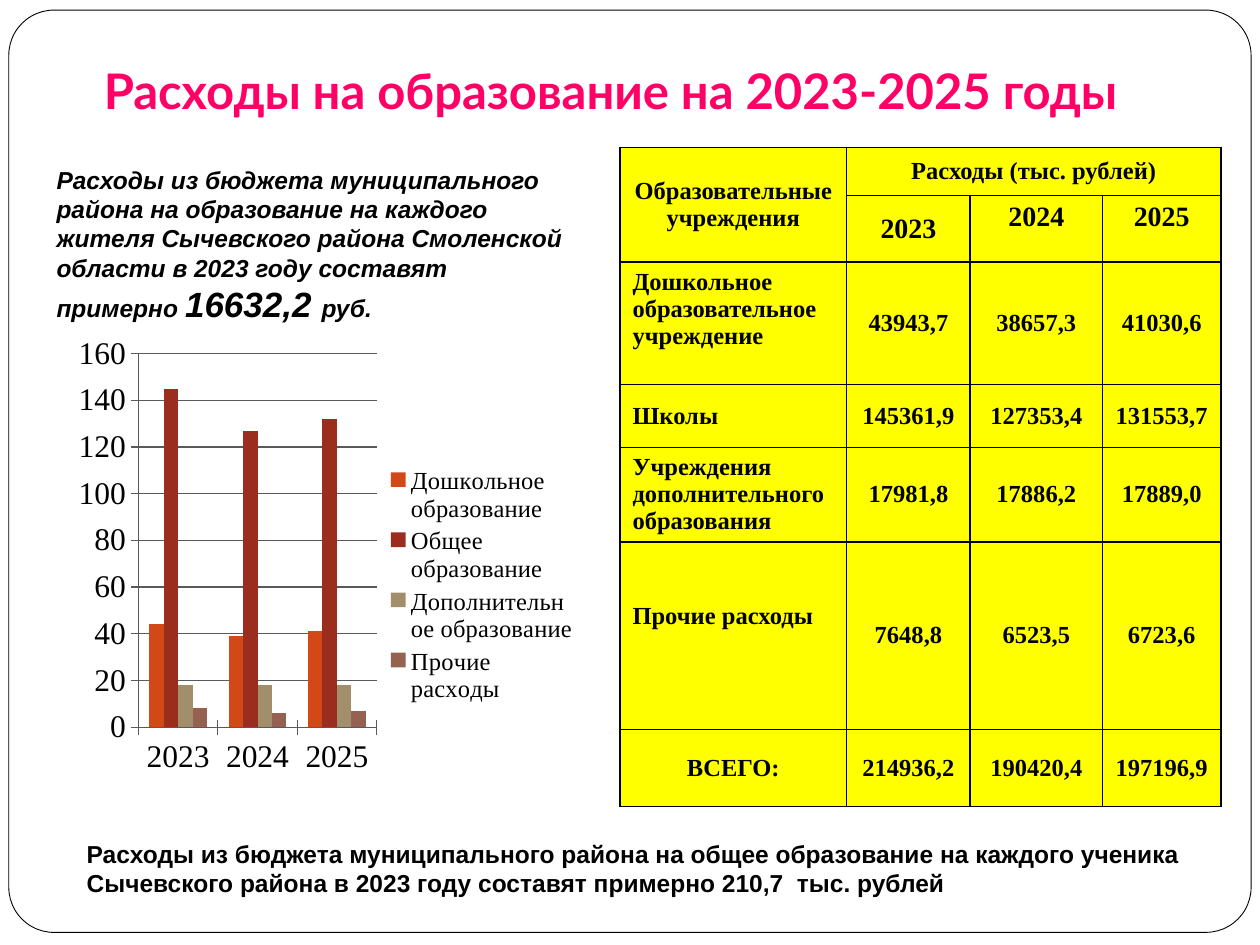
from lxml import etree
from pptx import Presentation
from pptx import util as u
from pptx.chart.data import CategoryChartData
from pptx.dml.color import RGBColor
from pptx.enum import chart as ch, shapes, text
from pptx.oxml import ns

In, Pt = u.Inches, u.Pt
AL, ANC = text.PP_ALIGN, text.MSO_ANCHOR
COLORS = {"title": "FF0066", "ink": "000000", "paper": "FFFFFF", "cell": "FFFF00", "axis": "595959"}
TITLE = "Расходы на образование на 2023-2025 годы"
RESIDENT = [
    ("Расходы из бюджета муниципального района на образование на каждого жителя "
     "Сычевского района Смоленской области в 2023 году составят примерно ", 14),
    ("16632,2 ", 20),
    ("руб.", 14),
]
PUPIL = [
    ("Расходы из бюджета муниципального района на общее образование на каждого ученика "
     "Сычевского района в 2023 году составят примерно 210,7  тыс. рублей", 14),
]
YEARS = ["2023", "2024", "2025"]
SERIES = [
    ("Дошкольное образование", (44, 39, 41), "D34817"),
    ("Общее образование", (145, 127, 132), "9B2D1F"),
    ("Дополнительное образование", (18, 18, 18), "A28E6A"),
    ("Прочие расходы", (8, 6, 7), "956251"),
]
ROWS = [
    ["Образовательные учреждения", "Расходы (тыс. рублей)", "", ""],
    ["", *YEARS],
    ["Дошкольное образовательное учреждение", "43943,7", "38657,3", "41030,6"],
    ["Школы", "145361,9", "127353,4", "131553,7"],
    ["Учреждения\nдополнительного\nобразования", "17981,8", "17886,2", "17889,0"],
    ["Прочие расходы", "7648,8", "6523,5", "6723,6"],
    ["ВСЕГО:", "214936,2", "190420,4", "197196,9"],
]
COL_W = [1.8, 0.98, 1.05, 0.94]
ROW_H = [0.38, 0.53, 0.97, 0.5, 0.75, 1.49, 0.61]
TOP_CELLS = {(1, 2), (1, 3), (2, 0), (5, 0)}


def rgb(name):
    return RGBColor.from_string(COLORS.get(name, name))


def style(font, name, size, color="ink", bold=False):
    font.name, font.size, font.bold = name, Pt(size), bold
    font.color.rgb = rgb(color)


def add_frame(slide):
    sp = slide.shapes.add_shape(shapes.MSO_SHAPE.ROUNDED_RECTANGLE, In(0.07), In(0.08), In(9.86), In(7.32))
    sp.adjustments[0] = 0.049
    sp.shadow.inherit = False
    sp.fill.solid()
    sp.fill.fore_color.rgb = rgb("paper")
    sp.line.color.rgb = rgb("ink")
    sp.line.width = Pt(0.5)
    slide.shapes._spTree.insert(2, sp._element)


def add_title(slide):
    sp = slide.shapes.title
    sp.left, sp.top, sp.width, sp.height = In(0), In(0.28), In(9.69), In(0.77)
    tf = sp.text_frame
    tf.text = TITLE
    tf.vertical_anchor = ANC.BOTTOM
    tf.margin_bottom = In(0.1)
    p = tf.paragraphs[0]
    p.alignment = AL.CENTER
    style(p.font, "Lato", 28, "title", True)


def add_note(slide, box, runs, italic=False):
    tf = slide.shapes.add_textbox(*map(In, box)).text_frame
    tf.word_wrap = True
    tf.vertical_anchor = ANC.MIDDLE
    p = tf.paragraphs[0]
    style(p.font, "Arial", 14, bold=True)
    p.font.italic = italic
    for words, size in runs:
        r = p.add_run()
        r.text = words
        r.font.size = Pt(size)


def add_borders(cell):
    tcPr = cell._tc.get_or_add_tcPr()
    for i, side in enumerate(("lnL", "lnR", "lnT", "lnB")):
        ln = etree.Element(ns.qn(f"a:{side}"), w=str(Pt(1)))
        fill = etree.SubElement(ln, ns.qn("a:solidFill"))
        etree.SubElement(fill, ns.qn("a:srgbClr"), val=COLORS["ink"])
        tcPr.insert(i, ln)


def add_table(slide):
    table = slide.shapes.add_table(len(ROWS), len(COL_W), In(4.92), In(1.17),
                                   In(sum(COL_W)), In(sum(ROW_H))).table
    for col, width in zip(table.columns, COL_W):
        col.width = In(width)
    for row, height in zip(table.rows, ROW_H):
        row.height = In(height)
    table.cell(0, 0).merge(table.cell(1, 0))
    table.cell(0, 1).merge(table.cell(0, 3))
    for i, row in enumerate(ROWS):
        for j, words in enumerate(row):
            cell = table.cell(i, j)
            cell.fill.solid()
            cell.fill.fore_color.rgb = rgb("cell")
            add_borders(cell)
            if not words:
                continue
            cell.text = words
            cell.vertical_anchor = ANC.TOP if (i, j) in TOP_CELLS else ANC.MIDDLE
            for p in cell.text_frame.paragraphs:
                p.alignment = AL.JUSTIFY if j == 0 and 2 <= i <= 5 else AL.CENTER
                style(p.font, "Times New Roman", 16 if i == 1 else 14, bold=True)
    table.cell(5, 0).margin_top = In(0.48)


def add_chart(slide):
    data = CategoryChartData()
    data.categories = YEARS
    for name, values, _ in SERIES:
        data.add_series(name, values)
    chart = slide.shapes.add_chart(ch.XL_CHART_TYPE.COLUMN_CLUSTERED, In(0.31), In(2.58),
                                   In(4.38), In(4.13), data).chart
    style(chart.font, "Times New Roman", 18)
    chart.has_title = False
    chart.has_legend = True
    chart.legend.position = ch.XL_LEGEND_POSITION.RIGHT
    chart.legend.include_in_layout = False
    style(chart.legend.font, "Times New Roman", 14)
    plot = chart.plots[0]
    plot.vary_by_categories = False
    plot.gap_width, plot.overlap = 150, 0
    for series, (_, _, color) in zip(plot.series, SERIES):
        series.format.fill.solid()
        series.format.fill.fore_color.rgb = rgb(color)
    value = chart.value_axis
    value.minimum_scale, value.maximum_scale, value.major_unit = 0, 160, 20
    value.has_major_gridlines = True
    value.major_gridlines.format.line.color.rgb = rgb("axis")
    for axis in (value, chart.category_axis):
        axis.major_tick_mark = ch.XL_TICK_MARK.CROSS
        axis.format.line.color.rgb = rgb("axis")
    area = chart._chartSpace.chart.plotArea
    for old in area.findall(ns.qn("c:layout")):
        area.remove(old)
    layout = etree.Element(ns.qn("c:layout"))
    manual = etree.SubElement(layout, ns.qn("c:manualLayout"))
    for tag, val in (("layoutTarget", "inner"), ("xMode", "edge"), ("yMode", "edge"),
                     ("x", 0.18), ("y", 0.055), ("w", 0.432), ("h", 0.718)):
        etree.SubElement(manual, ns.qn(f"c:{tag}"), val=str(val))
    area.insert(0, layout)


def main():
    prs = Presentation()
    prs.slide_width, prs.slide_height = In(10), In(7.5)
    slide = prs.slides.add_slide(prs.slide_layouts[5])
    add_frame(slide)
    add_title(slide)
    add_table(slide)
    add_note(slide, (0.35, 1.23, 4.25, 1.42), RESIDENT, italic=True)
    add_note(slide, (0.59, 6.66, 9, 0.46), PUPIL)
    add_chart(slide)
    prs.save("out.pptx")


if __name__ == "__main__":
    main()
